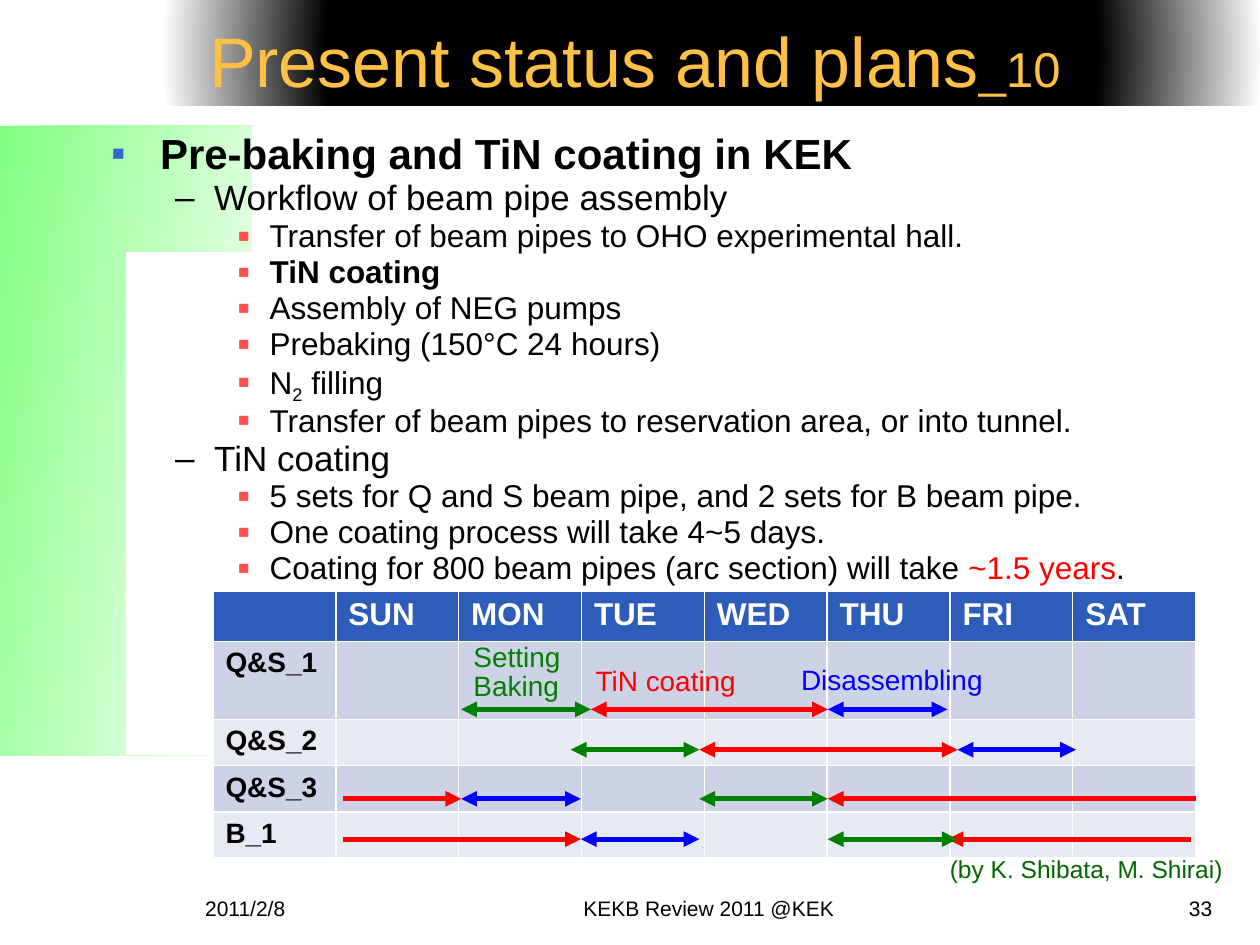
from lxml.etree import SubElement as Sub
from pptx import Presentation
from pptx.dml.color import RGBColor as RGB
from pptx.enum.shapes import MSO_CONNECTOR as LINE, MSO_SHAPE as SHAPE
from pptx.enum.text import MSO_ANCHOR as ANCHOR, MSO_AUTO_SIZE as AUTO, PP_ALIGN as ALIGN
from pptx.oxml import parse_xml
from pptx.oxml.ns import nsdecls, qn
from pptx.util import Inches, Pt

HUE = {"gold": "FFC145", "black": "000000", "white": "FFFFFF", "mint": "80FF80",
       "sky": "3366CC", "coral": "FF5050", "red": "FF0000", "green": "008000",
       "blue": "0000FF", "pine": "006600", "head": "2D5CB9",
       "dark": "CDD2E6", "light": "E8EAF3"}
FONT = "Arial"

TITLE = [("Present status and plans", 40), ("_10", 28)]
BODY = [
    (0, ["Pre-baking and TiN coating in KEK"]),
    (1, ["Workflow of beam pipe assembly"]),
    (2, ["Transfer of beam pipes to OHO experimental hall."]),
    (2, [("TiN coating", "bold")]),
    (2, ["Assembly of NEG pumps"]),
    (2, ["Prebaking (150°C 24 hours)"]),
    (2, ["N", ("2", "sub"), " filling"]),
    (2, ["Transfer of beam pipes to reservation area, or into tunnel."]),
    (1, ["TiN coating"]),
    (2, ["5 sets for Q and S beam pipe, and 2 sets for B beam pipe."]),
    (2, ["One coating process will take 4~5 days."]),
    (2, ["Coating for 800 beam pipes (arc section) will take ", ("~1.5 years", "red"), "."]),
]
LEVELS = [
    {"size": 24, "left": 0.38, "hang": 0.38, "mark": "■", "hue": "sky", "pct": 50},
    {"size": 20, "left": 0.81, "hang": 0.31, "mark": "–", "hue": "black", "pct": 100},
    {"size": 18, "left": 1.25, "hang": 0.25, "mark": "■", "hue": "coral", "pct": 60},
]
DAYS = ["", "SUN", "MON", "TUE", "WED", "THU", "FRI", "SAT"]
ROWS = [("Q&S_1", 0.62), ("Q&S_2", 0.33), ("Q&S_3", 0.33), ("B_1", 0.33)]
SPANS = [
    (5.63, [("red", 4.69, 6.57, "both"), ("green", 3.66, 4.69, "both"),
            ("blue", 6.57, 7.52, "both")]),
    (5.95, [("red", 5.55, 7.6, "both"), ("green", 4.53, 5.55, "both"),
            ("blue", 7.6, 8.54, "both")]),
    (6.34, [("red", 6.57, 9.49, "head"), ("red", 2.72, 3.66, "tail"),
            ("green", 5.55, 6.57, "both"), ("blue", 3.66, 4.61, "both")]),
    (6.66, [("red", 7.52, 9.45, "head"), ("red", 2.72, 4.61, "tail"),
            ("green", 6.57, 7.6, "both"), ("blue", 4.61, 5.55, "both")]),
]
NOTES = [
    (["Setting", "Baking"], (3.66, 5.07, 0.9, 0.56), 16, "green", 0.85),
    (["TiN coating"], (4.63, 5.22, 1.33, 0.37), 16, "red", 1.0),
    (["Disassembling"], (6.26, 5.21, 1.66, 0.37), 16, "blue", 1.0),
    (["(by K. Shibata, M. Shirai)"], (7.44, 6.73, 2.38, 0.34), 14, "pine", 1.0),
]
FOOT = [("2011/2/8", 1.53, 2.33, ALIGN.LEFT),
        ("KEKB Review 2011 @KEK", 4.04, 3.17, ALIGN.CENTER),
        ("33", 7.39, 2.33, ALIGN.RIGHT)]
EDGE = (1.93, 0.84)
CURVES = [((1.83, 1.09), (1.78, 1.12), (1.55, 1.83)),
          ((1.33, 2.54), (1.26, 3.25), (1.23, 3.9)),
          ((1.21, 4.56), (1.18, 5.5), (1.26, 5.86))]
CORNERS = [(1.55, 6.48), (0, 6.48), (0, 0.84)]


def color(name):
    return RGB.from_string(HUE[name])


def style(run, size, hue="black", bold=False):
    font = run.font
    font.name, font.size, font.bold = FONT, Pt(size), bold
    font.color.rgb = color(hue)


def place(shape, box):
    shape.left, shape.top, shape.width, shape.height = map(Inches, box)
    shape.text_frame.auto_size = AUTO.NONE


def bend(start, one, two, end, steps=16):
    for i in range(1, steps + 1):
        t = i / steps
        u = 1 - t
        yield tuple(u**3 * a + 3 * u * u * t * b + 3 * u * t * t * c + t**3 * d
                    for a, b, c, d in zip(start, one, two, end))


def outline():
    last, dots = EDGE, []
    for curve in CURVES:
        dots += bend(last, *curve)
        last = curve[-1]
    return dots + CORNERS


def draw_back(slide):
    pen = slide.shapes.build_freeform(*EDGE, scale=Inches(1))
    pen.add_line_segments(outline(), close=True)
    leaf = pen.convert_to_shape()
    leaf.fill.gradient()
    leaf.fill.gradient_angle = 350
    for stop, name in zip(leaf.fill.gradient_stops, ("mint", "white")):
        stop.color.rgb = color(name)
    band = slide.shapes.add_shape(SHAPE.RECTANGLE, *map(Inches, (1.3, 0, 8.7, 0.84)))
    stops = "".join(f'<a:gs pos="{pos}000"><a:srgbClr val="{HUE[name]}"/></a:gs>'
                    for pos, name in ((0, "black"), (70, "black"), (100, "white")))
    band._element.spPr.find(qn("a:prstGeom")).addnext(parse_xml(
        f'<a:gradFill {nsdecls("a")} rotWithShape="1"><a:gsLst>{stops}</a:gsLst>'
        '<a:path path="circle"><a:fillToRect l="50000" t="50000" r="50000" b="50000"/>'
        '</a:path></a:gradFill>'))
    for i, shape in enumerate((leaf, band)):
        shape.line.fill.background()
        shape.shadow.inherit = False
        slide.shapes._spTree.insert(2 + i, shape._element)


def fill_title(shape):
    place(shape, (1.56, 0.08, 8.15, 0.79))
    shape.text_frame.vertical_anchor = ANCHOR.MIDDLE
    para = shape.text_frame.paragraphs[0]
    para.alignment = ALIGN.LEFT
    for text, size in TITLE:
        run = para.add_run()
        run.text = text
        style(run, size, "gold")


def set_mark(para, look):
    props = para._p.get_or_add_pPr()
    props.set("marL", str(Inches(look["left"])))
    props.set("indent", str(-Inches(look["hang"])))
    Sub(Sub(props, qn("a:buClr")), qn("a:srgbClr"), val=HUE[look["hue"]])
    Sub(props, qn("a:buSzPct"), val=f'{look["pct"]}000')
    Sub(props, qn("a:buFont"), typeface=FONT)
    Sub(props, qn("a:buChar"), char=look["mark"])


def fill_body(shape):
    place(shape, (0.79, 0.99, 8.83, 0.63))
    frame = shape.text_frame
    for i, (level, parts) in enumerate(BODY):
        para = frame.add_paragraph() if i else frame.paragraphs[0]
        look = LEVELS[level]
        para.level, para.line_spacing = level, 0.95
        para.space_before = Pt(0)
        set_mark(para, look)
        for part in parts:
            text, kind = (part, "") if isinstance(part, str) else part
            run = para.add_run()
            run.text = text
            style(run, look["size"], "red" if kind == "red" else "black",
                  level == 0 or kind == "bold")
            if kind == "sub":
                run.font._element.set("baseline", "-25000")


def add_week(slide):
    grid = slide.shapes.add_table(len(ROWS) + 1, len(DAYS),
                                  *map(Inches, (1.69, 4.69, 7.8, 1.97))).table
    for col in grid.columns:
        col.width = Inches(7.8 / len(DAYS))
    lines = [(DAYS, 0.36)] + [([name] + [""] * 7, high) for name, high in ROWS]
    for r, (texts, high) in enumerate(lines):
        grid.rows[r].height = Inches(high)
        size, hue = (16, "black") if r else (18, "white")
        back = ("light", "dark")[r % 2] if r else "head"
        for c, text in enumerate(texts):
            cell = grid.cell(r, c)
            cell.fill.solid()
            cell.fill.fore_color.rgb = color(back)
            para = cell.text_frame.paragraphs[0]
            if text:
                para.text = text
                style(para.runs[0], size, hue, True)
            else:
                para._p.get_or_add_endParaRPr().set("sz", f"{size}00")


def add_span(slide, y, hue, x1, x2, ends):
    line = slide.shapes.add_connector(LINE.STRAIGHT, *map(Inches, (x1, y, x2, y)))
    line.line.color.rgb = color(hue)
    line.line.width = Pt(3)
    for end in ("head", "tail"):
        if ends in (end, "both"):
            Sub(line.line._get_or_add_ln(), qn(f"a:{end}End"), type="triangle")
    Sub(line._element.spPr, qn("a:effectLst"))


def add_text(slide, texts, box, size, hue="black", gap=1.0, align=ALIGN.LEFT, wrap=False):
    frame = slide.shapes.add_textbox(*map(Inches, box)).text_frame
    frame.word_wrap = wrap
    frame.text = "\n".join(texts)
    for para in frame.paragraphs:
        para.alignment, para.line_spacing = align, gap
        style(para.runs[0], size, hue)


def main():
    deck = Presentation()
    deck.slide_width, deck.slide_height = Inches(10), Inches(7.5)
    slide = deck.slides.add_slide(deck.slide_layouts[1])
    draw_back(slide)
    fill_title(slide.shapes.title)
    fill_body(slide.placeholders[1])
    for text, x, wide, align in FOOT:
        add_text(slide, [text], (x, 7.06, wide, 0.29), 12, align=align, wrap=True)
    add_week(slide)
    for y, spans in SPANS:
        for span in spans:
            add_span(slide, y, *span)
    for note in NOTES:
        add_text(slide, *note)
    deck.save("out.pptx")


if __name__ == "__main__":
    main()
